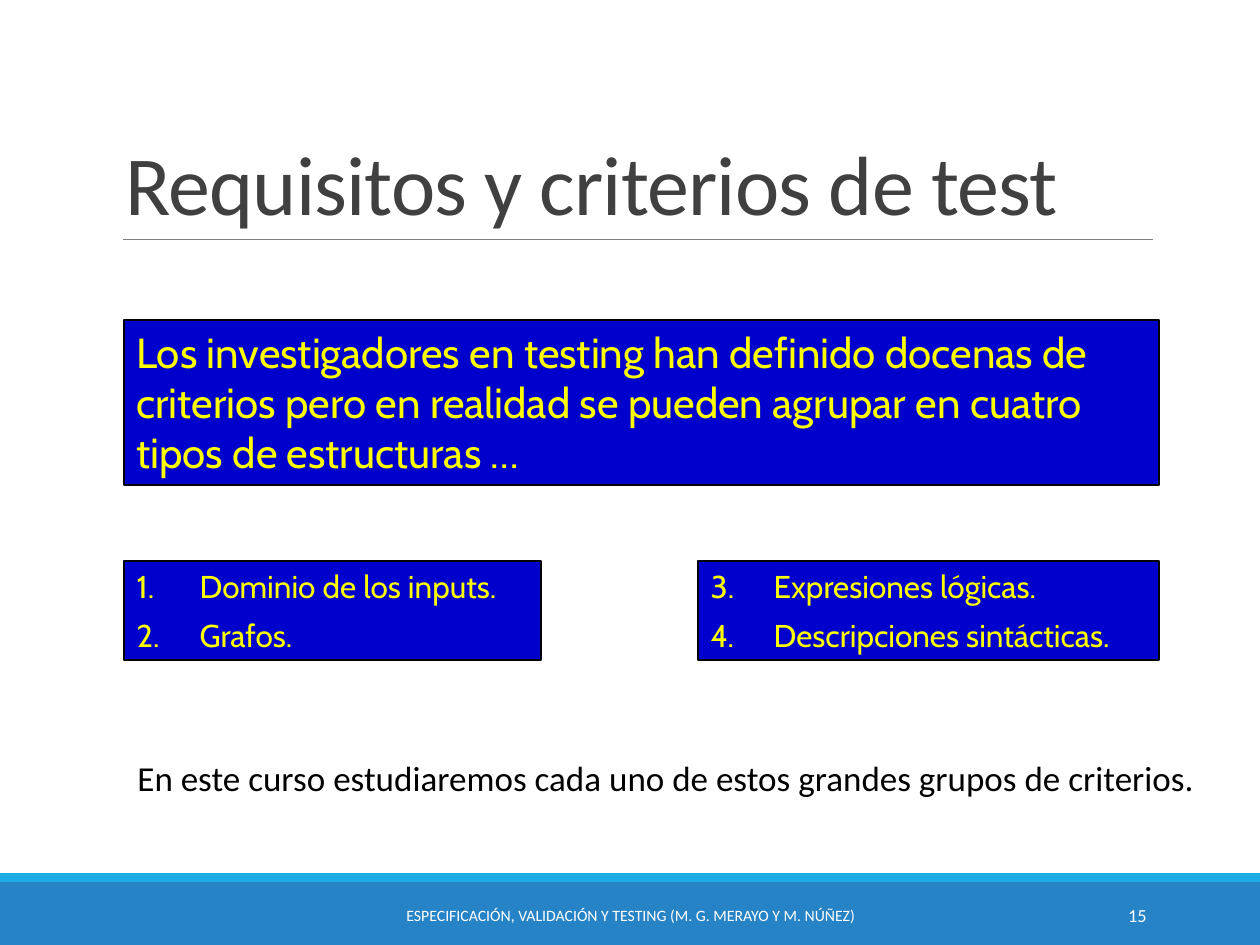
from pptx import Presentation
from pptx import util as u
from pptx.dml.color import RGBColor
from pptx.enum import shapes, text
from pptx.oxml.ns import qn
from lxml import etree

PX = 914400 / 126
NAVY = RGBColor(0x00, 0x00, 0xCC)
YELLOW = RGBColor(0xFF, 0xFF, 0x00)
BLACK = RGBColor(0x00, 0x00, 0x00)
WHITE = RGBColor(0xFF, 0xFF, 0xFF)
GRAY = RGBColor(0x80, 0x80, 0x80)
DARK = RGBColor(0x40, 0x40, 0x40)
BLUE = RGBColor(0x26, 0x83, 0xC6)
CYAN = RGBColor(0x1C, 0xAD, 0xE4)
LEFT = text.PP_ALIGN.LEFT


def emu(*nums):
    return [u.Emu(round(n * PX)) for n in nums]


def place(shape, box):
    shape.left, shape.top, shape.width, shape.height = emu(*box)


def write(shape, words, size, color, face="Calibri", align=LEFT,
          anchor=text.MSO_ANCHOR.TOP, wrap=True):
    frame = shape.text_frame
    frame.text = words
    frame.word_wrap = wrap
    frame.auto_size = text.MSO_AUTO_SIZE.NONE
    frame.vertical_anchor = anchor
    for para in frame.paragraphs:
        para.alignment = align
        para.line_spacing = 1.0
        para.space_before = u.Pt(0)
        for run in para.runs:
            run.font.size = u.Pt(size)
            run.font.name = face
            run.font.color.rgb = color
    return frame


def paint(shape, fill):
    shape.fill.solid()
    shape.fill.fore_color.rgb = fill


def frame_box(shape):
    paint(shape, NAVY)
    shape.line.color.rgb = BLACK
    shape.line.width = u.Pt(1)


def add_rect(slide, box, fill):
    rect = slide.shapes.add_shape(shapes.MSO_SHAPE.RECTANGLE, *emu(*box))
    rect.shadow.inherit = False
    paint(rect, fill)
    rect.line.fill.background()
    return rect


def add_text(slide, box, words, size, color, **opts):
    return write(slide.shapes.add_textbox(*emu(*box)), words, size, color, **opts)


def add_title(slide, box, words):
    x, y, w, h = box
    title = slide.shapes.title
    place(title, box)
    frame = write(title, words, 48, DARK, anchor=text.MSO_ANCHOR.BOTTOM)
    para = frame.paragraphs[0]
    para.line_spacing = 0.85
    para.runs[0].font._element.set("spc", "-50")
    ends = emu(x + 10, y + h, x + w, y + h)
    rule = slide.shapes.add_connector(shapes.MSO_CONNECTOR.STRAIGHT, *ends)
    rule.line.color.rgb = GRAY
    rule.line.width = u.Pt(0.5)
    etree.SubElement(rule._element.spPr, qn("a:effectLst"))


def add_claim(slide, box, words):
    rect = add_rect(slide, box, NAVY)
    frame_box(rect)
    write(rect, words, 24, YELLOW, face="Cabin")


def add_list(shape, box, items, start):
    place(shape, box)
    frame_box(shape)
    frame = write(shape, "\n".join(items), 18, YELLOW, face="Cabin")
    for para in frame.paragraphs:
        para.space_before = u.Pt(6)
        props = para._p.get_or_add_pPr()
        props.set("marL", str(u.Inches(0.5)))
        props.set("indent", str(-u.Inches(0.5)))
        mark = etree.SubElement(props, qn("a:buAutoNum"))
        mark.set("type", "arabicPeriod")
        mark.set("startAt", str(start))


def add_footer(slide, box, words, page):
    x, y, w, h = box
    add_rect(slide, (x, y + 9, w, h - 9), BLUE)
    add_rect(slide, (x, y, w, 9), CYAN)
    mid = text.MSO_ANCHOR.MIDDLE
    add_text(slide, (x + 381, y + 17, 499, 50), words, 9, WHITE,
             align=text.PP_ALIGN.CENTER, anchor=mid)
    add_text(slide, (x + 1023, y + 17, 136, 50), page, 10.5, WHITE,
             align=text.PP_ALIGN.RIGHT, anchor=mid)


def main():
    deck = Presentation()
    deck.slide_width, deck.slide_height = emu(1260, 945)
    slide = deck.slides.add_slide(deck.slide_layouts[3])
    add_footer(slide, (0, 873, 1260, 72),
               "ESPECIFICACIÓN, VALIDACIÓN Y TESTING (M. G. MERAYO Y M. NÚÑEZ)", "15")
    add_title(slide, (113, 39, 1040, 200), "Requisitos y criterios de test")
    add_claim(slide, (124, 320, 1035, 165),
              "Los investigadores en testing han definido docenas de criterios "
              "pero en realidad se pueden agrupar en cuatro tipos de estructuras …")
    holders = slide.placeholders
    add_list(holders[1], (124, 561, 417, 99),
             ["Dominio de los inputs.", "Grafos."], 1)
    add_list(holders[2], (698, 561, 461, 99),
             ["Expresiones lógicas.", "Descripciones sintácticas."], 3)
    add_text(slide, (125, 750, 1092, 55),
             "En este curso estudiaremos cada uno de estos grandes grupos de criterios.",
             20, BLACK, wrap=False)
    deck.save("out.pptx")


if __name__ == "__main__":
    main()
